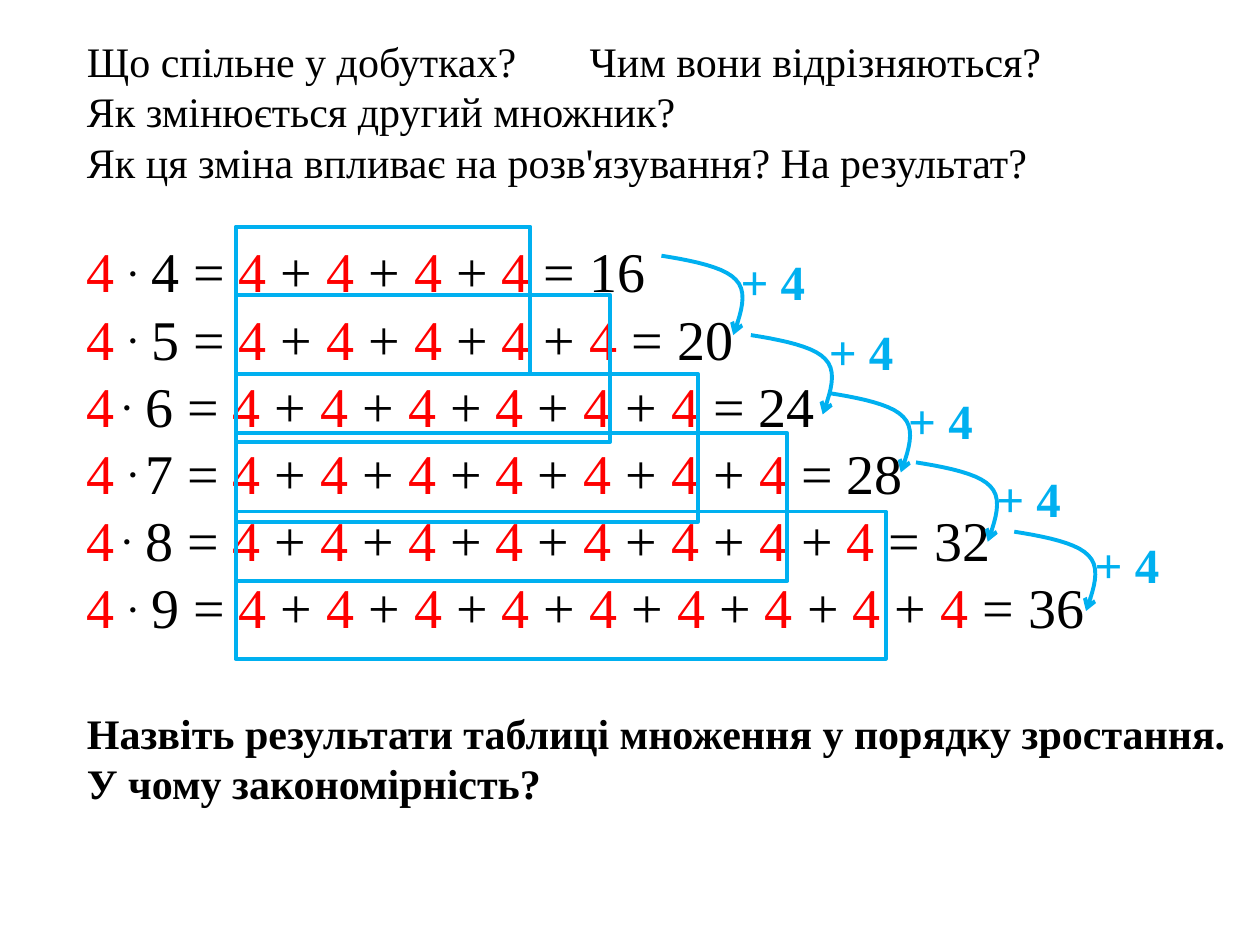
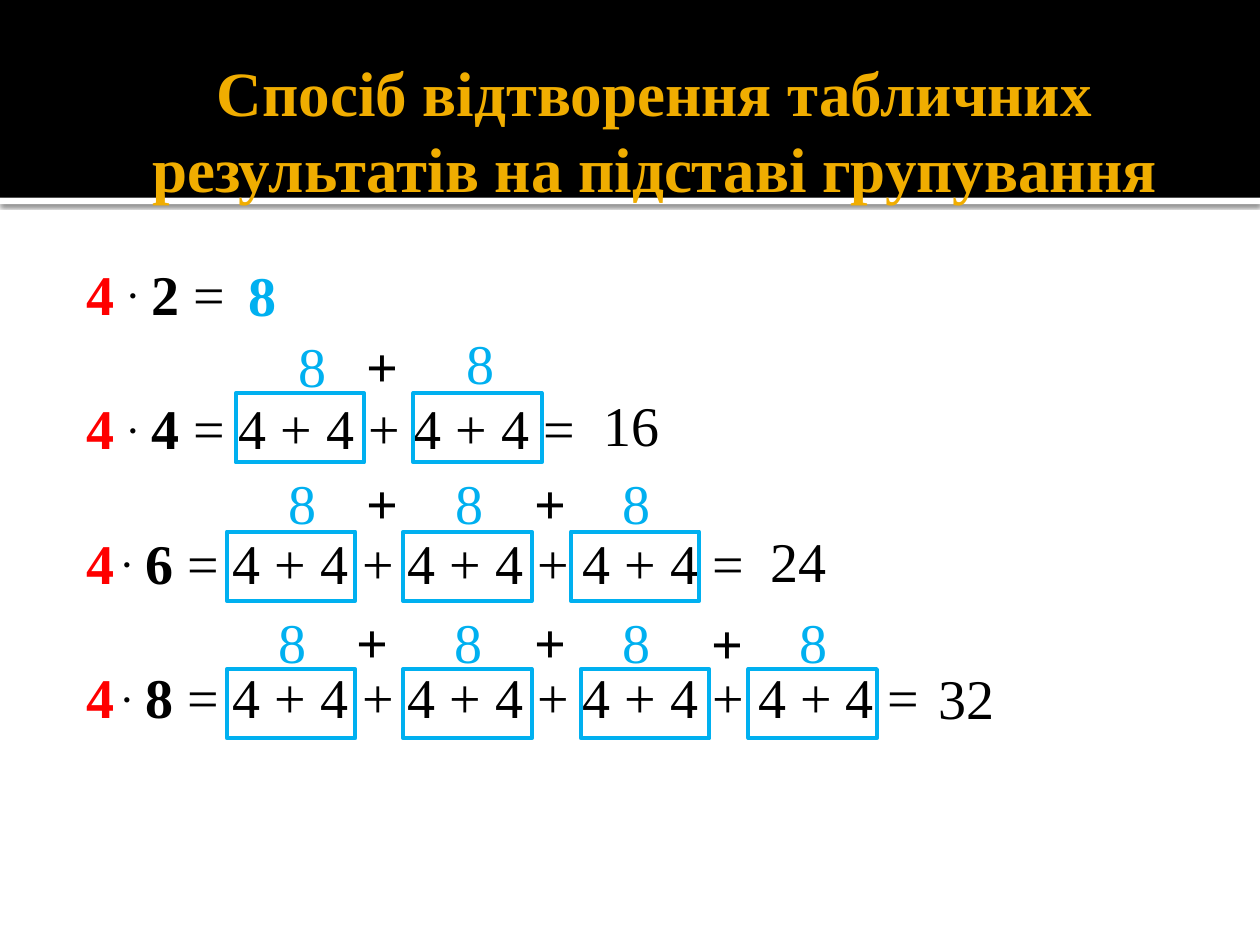
import pptx
import pptx.util
import pptx.dml.color
import pptx.enum.shapes
import pptx.enum.text
import pptx.oxml.ns
import lxml.etree

RGBColor = pptx.dml.color.RGBColor
BLACK = RGBColor(0, 0, 0)
WHITE = RGBColor(255, 255, 255)
RED = RGBColor(255, 0, 0)
BLUE = RGBColor(0, 0xB0, 0xF0)
GOLD = RGBColor(0xF0, 0xAD, 0)
FONT = "Times New Roman"
WIDE, HIGH = 10, 7.5
SMALL, LARGE = 24, 32
PITCH = 1.2

ASKS = [
    "Що спільне у добутках?\tЧим вони відрізняються?",
    "Як змінюється другий множник?",
    "Як ця зміна впливає на розв'язування? На результат?",
]
TASKS = [
    "Назвіть результати таблиці множення у порядку зростання.",
    "У чому закономірність?",
]
TITLE = "Спосіб відтворення табличних результатів на підставі групування"
HEADS = {6: ("4", " .", " "), 7: ("4 ", ". ", ""), 8: ("4", " .", " ")}
HEAD = ("4 ", ".", " ")

FRAMES = [(1.8, 2.34), (2.34, 2.97), (2.97, 3.67), (3.44, 4.38), (4.06, 5.16)]
STEPS = [
    ((5.25, 2.03), (5.78, 1.95)),
    ((5.96, 2.66), (6.48, 2.5)),
    ((6.58, 3.12), (7.11, 3.05)),
    ((7.27, 3.67), (7.81, 3.67)),
    ((8.05, 4.22), (8.59, 4.19)),
]
CURVE = [
    ((0, 0), (0.25, 0.04), (0.5, 0.09), (0.59, 0.19)),
    ((0.59, 0.19), (0.69, 0.29), (0.63, 0.46), (0.57, 0.63)),
]
GROUPS = [
    {"top": 3.12, "boxes": [1.87, 3.28], "eights": [(2.27, 2.58), (3.6, 2.56)],
     "pluses": [(2.81, 2.58)], "sum": ("16", 4.69, 3.05)},
    {"top": 4.22, "boxes": [1.8, 3.2, 4.53],
     "eights": [(x, 3.67) for x in (2.19, 3.52, 4.84)],
     "pluses": [(x, 3.67) for x in (2.81, 4.14)], "sum": ("24", 6.02, 4.13)},
    {"top": 5.31, "boxes": [1.8, 3.2, 4.61, 5.94],
     "eights": [(x, 4.77) for x in (2.11, 3.51, 4.84, 6.25)],
     "pluses": [(2.73, 4.77), (4.14, 4.77), (5.55, 4.78)], "sum": ("32", 7.35, 5.22)},
]


def inch(*nums):
    return [pptx.util.Inches(n) for n in nums]


def style(run, size, color=BLACK, bold=False):
    font = run.font
    font.name, font.size, font.bold = FONT, pptx.util.Pt(size), bold
    font.color.rgb = color


def add_run(para, text, color=BLACK, bold=False, raised=False):
    run = para.add_run()
    run.text = text
    style(run, LARGE, color, bold)
    if raised:
        run.font._element.set("baseline", "30000")


def text_box(slide, left, top, width, height, pads=(0.1, 0.05, 0.1, 0.05)):
    frame = slide.shapes.add_textbox(*inch(left, top, width, height)).text_frame
    frame.word_wrap = True
    (frame.margin_left, frame.margin_top,
     frame.margin_right, frame.margin_bottom) = inch(*pads)
    return frame


def body(slide, top, height):
    return text_box(slide, 0.5, top, 9.4, height, (0.19, 0.12, 0.05, 0.05))


def next_para(frame, size, gap=0):
    first = frame.paragraphs[0]
    para = frame.add_paragraph() if first.runs else first
    para.line_spacing = pptx.util.Pt(size * PITCH)
    para.space_before = pptx.util.Pt(gap * PITCH)
    return para


def add_lines(frame, lines, gap=0, bold=False):
    for i, line in enumerate(lines):
        para = next_para(frame, SMALL, 0 if i else gap)
        add_run(para, line, BLACK, bold)
        para.runs[0].font.size = pptx.util.Pt(SMALL)


def add_head(para, count, bold):
    four, dot, space = HEADS.get(count, HEAD)
    add_run(para, four, RED, bold)
    add_run(para, dot, BLACK, True, True)
    add_run(para, f"{space}{count} ", BLACK, bold)


def note(slide, text, left, top, size=LARGE, color=BLUE, bold=False, width=0.39):
    frame = text_box(slide, left, top, width, size / 50)
    frame.text = text
    style(frame.paragraphs[0].runs[0], size, color, bold)


def block(slide, left, top, width, height, fill=None):
    kind = pptx.enum.shapes.MSO_SHAPE.RECTANGLE
    shape = slide.shapes.add_shape(kind, *inch(left, top, width, height))
    shape.shadow.inherit = False
    if fill is None:
        shape.fill.background()
        shape.line.color.rgb = BLUE
        shape.line.width = pptx.util.Pt(2.25)
    else:
        shape.fill.solid()
        shape.fill.fore_color.rgb = fill
        shape.line.fill.background()
    return shape


def sub(node, tag, **attrs):
    return lxml.etree.SubElement(node, pptx.oxml.ns.qn(tag), attrs)


def arrow(slide, left, top, cuts=10):
    spots = []
    for a, b, c, d in CURVE:
        for i in range(1, cuts + 1):
            t = i / cuts
            u = 1 - t
            x, y = (u**3 * a[k] + 3 * u * u * t * b[k] + 3 * u * t * t * c[k]
                    + t**3 * d[k] for k in (0, 1))
            spots.append(inch(left + x, top + y))
    pen = slide.shapes.build_freeform(*inch(left, top))
    pen.add_line_segments(spots, close=False)
    shape = pen.convert_to_shape()
    shape.shadow.inherit = False
    shape.fill.background()
    shape.line.color.rgb = BLUE
    shape.line.width = pptx.util.Pt(2.25)
    sub(shape.line._get_or_add_ln(), "a:tailEnd", type="arrow")


def header(slide, text):
    rule = block(slide, 0, 1.57, WIDE, 0.05, WHITE)
    glow = rule._element.spPr.find(pptx.oxml.ns.qn("a:effectLst"))
    shade = sub(glow, "a:outerShdw", blurRad="31750", dist="10160", dir="5400000")
    tint = sub(shade, "a:srgbClr", val=str(BLACK))
    sub(tint, "a:alpha", val="60000")
    block(slide, 0, 0, WIDE, 1.57, BLACK)
    title = slide.shapes.title
    title._element.getparent().append(title._element)
    title.left, title.top, title.width, title.height = inch(0.67, 0.34, 9, 1.37)
    frame = title.text_frame
    frame.text = text
    frame.word_wrap = True
    frame.auto_size = pptx.enum.text.MSO_AUTO_SIZE.NONE
    frame.vertical_anchor = pptx.enum.text.MSO_ANCHOR.MIDDLE
    (frame.margin_left, frame.margin_top,
     frame.margin_right, frame.margin_bottom) = inch(0.1, 0.05, 0.05, 0.05)
    para = frame.paragraphs[0]
    para.alignment = pptx.enum.text.PP_ALIGN.CENTER
    para.line_spacing = pptx.util.Pt(36 * PITCH)
    style(para.runs[0], 36, GOLD, True)


def sums_slide(deck):
    slide = deck.slides.add_slide(deck.slide_layouts[6])
    frame = body(slide, 0.16, 7.19)
    add_lines(frame, ASKS)
    props = frame.paragraphs[0]._p.get_or_add_pPr()
    tabs = sub(props, "a:tabLst")
    sub(tabs, "a:tab", pos=str(pptx.util.Inches(3.99)), algn="l")
    for count in range(4, 10):
        para = next_para(frame, LARGE, SMALL if count == 4 else 0)
        add_head(para, count, False)
        for i in range(count):
            add_run(para, " + " if i else "= ")
            add_run(para, "4", RED)
        add_run(para, f" = {4 * count}")
    add_lines(frame, TASKS, LARGE, True)
    for top, width in FRAMES:
        block(slide, 1.87, top, width, 1.17)
    for start, label in STEPS:
        arrow(slide, *start)
        note(slide, "+ 4", *label, size=28, bold=True, width=0.87)


def groups_slide(deck):
    slide = deck.slides.add_slide(deck.slide_layouts[5])
    header(slide, TITLE)
    frame = body(slide, 1.94, 5.06)
    for count in (2, 4, 6, 8):
        para = next_para(frame, LARGE, 0 if count == 2 else LARGE)
        add_head(para, count, True)
        fours = " + ".join(["4"] * count)
        add_run(para, "=" if count == 2 else f"= {fours} =")
    note(slide, "8", 1.87, 2.02, bold=True)
    for group in GROUPS:
        for left in group["boxes"]:
            block(slide, left, group["top"], 1.02, 0.55)
        for spot in group["eights"]:
            note(slide, "8", *spot)
        for spot in group["pluses"]:
            note(slide, "+", *spot, color=BLACK, bold=True)
        note(slide, *group["sum"], color=BLACK, width=0.85)


def main():
    deck = pptx.Presentation()
    deck.slide_width, deck.slide_height = inch(WIDE, HIGH)
    sums_slide(deck)
    groups_slide(deck)
    deck.save("out.pptx")


if __name__ == "__main__":
    main()
